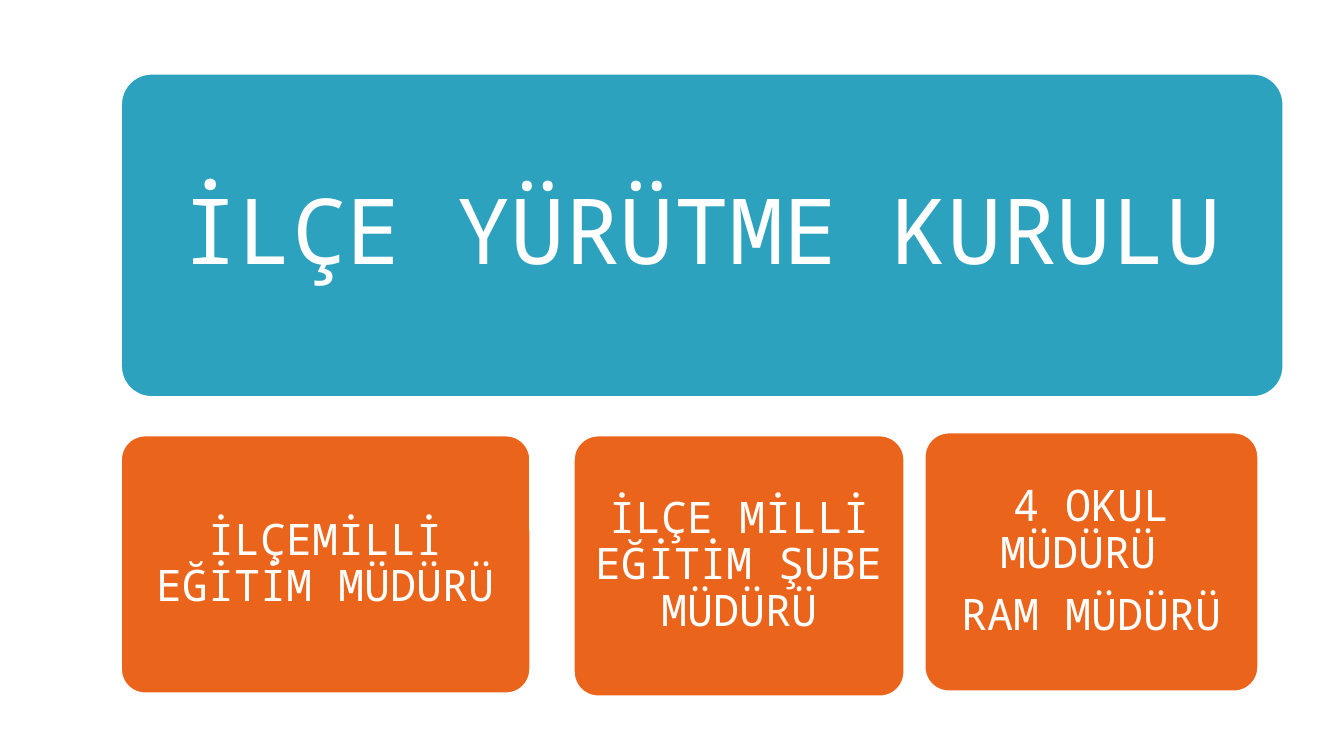
"""Build a slide showing the district executive board and its members."""
from pptx import Presentation
from pptx.dml.color import RGBColor
from pptx.enum.shapes import MSO_SHAPE as Shape
from pptx.enum.text import MSO_ANCHOR as Anchor, PP_ALIGN as Align
from pptx.util import Inches, Pt

BOARD = ((1.18, 0.71, 11.57, 3.25), ["İLÇE YÜRÜTME KURULU"])
MEMBERS = [
    ((1.18, 4.3, 4.1, 2.6), ["İLÇEMİLLİ EĞİTİM MÜDÜRÜ"]),
    ((5.67, 4.3, 3.32, 2.63), ["İLÇE MİLLİ EĞİTİM ŞUBE MÜDÜRÜ"]),
    ((9.15, 4.27, 3.35, 2.61), ["4 OKUL MÜDÜRÜ ", "RAM MÜDÜRÜ"]),
]
THEME = {
    "font": "Noto Sans Mono",
    "white": RGBColor.from_string("FFFFFF"),
    "outline": 4.33,
    "corner": 0.1,
    "line_spacing": 0.9,
    "space_ratio": 0.35,
    "board": {"fill": RGBColor.from_string("2DA2BF"), "size": 65, "margin": 0.27},
    "member": {"fill": RGBColor.from_string("EB641B"), "size": 31, "margin": 0.13},
}


def add_card(slide, box, lines, style):
    """Add a rounded card with centred text."""
    shape = slide.shapes.add_shape(Shape.ROUNDED_RECTANGLE, *map(Inches, box))
    shape.adjustments[0] = THEME["corner"]
    shape.shadow.inherit = False
    shape.fill.solid()
    shape.fill.fore_color.rgb = style["fill"]
    shape.line.color.rgb = THEME["white"]
    shape.line.width = Pt(THEME["outline"])

    frame = shape.text_frame
    frame.word_wrap = True
    frame.vertical_anchor = Anchor.MIDDLE
    frame.margin_left = frame.margin_right = Inches(style["margin"])
    frame.margin_top = frame.margin_bottom = Inches(style["margin"])
    frame.text = "\n".join(lines)
    for paragraph in frame.paragraphs:
        paragraph.alignment = Align.CENTER
        paragraph.line_spacing = THEME["line_spacing"]
        paragraph.space_after = Pt(style["size"] * THEME["space_ratio"])
        paragraph.font.name = THEME["font"]
        paragraph.font.size = Pt(style["size"])
        paragraph.font.color.rgb = THEME["white"]


def main():
    """Create and save the presentation."""
    presentation = Presentation()
    presentation.slide_width = Inches(13.33)
    presentation.slide_height = Inches(7.5)
    slide = presentation.slides.add_slide(presentation.slide_layouts[6])
    add_card(slide, *BOARD, THEME["board"])
    for box, lines in MEMBERS:
        add_card(slide, box, lines, THEME["member"])
    presentation.save("out.pptx")


if __name__ == "__main__":
    main()
